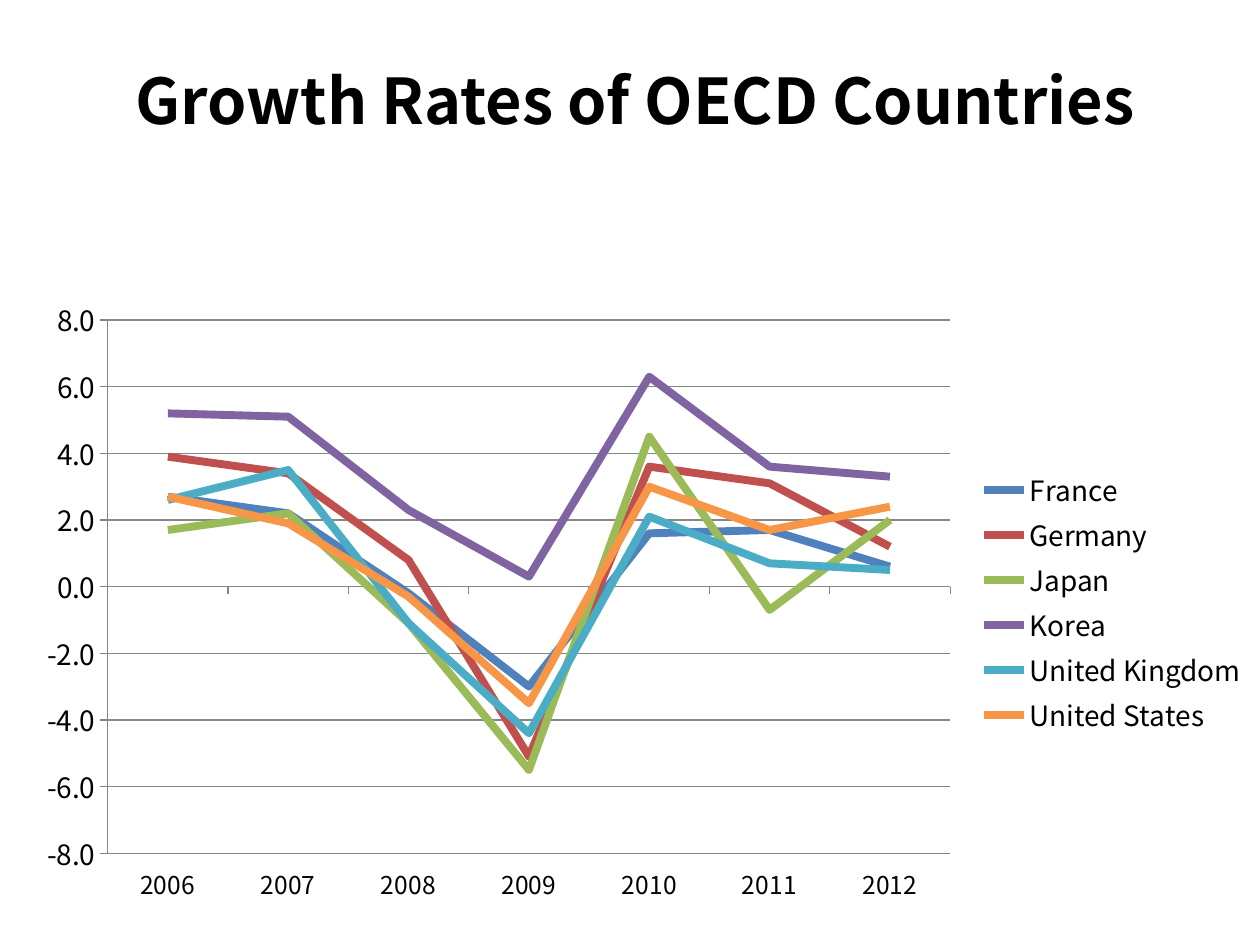
from dataclasses import dataclass

from lxml.etree import SubElement
from pptx import Presentation
from pptx.chart.data import CategoryChartData
from pptx.dml.color import RGBColor as RGB
from pptx.enum.chart import (XL_CHART_TYPE as Chart, XL_LEGEND_POSITION as Legend,
                             XL_MARKER_STYLE as Marker, XL_TICK_LABEL_POSITION as Label,
                             XL_TICK_MARK as Tick)
from pptx.enum.text import MSO_ANCHOR as Anchor, PP_ALIGN as Align
from pptx.oxml.ns import qn
from pptx.util import Pt


@dataclass(frozen=True)
class Theme:
    font: str = "Noto Sans CJK KR"
    text: str = "000000"
    grid: str = "868686"
    title_size: float = 36
    base_size: float = 10
    year_size: float = 14
    label_size: float = 16
    series_width: float = 4.5
    grid_width: float = 0.75


THEME = Theme()
YEARS = [str(year) for year in range(2006, 2013)]
GROWTH = [
    ("France", "4F81BD", (2.7, 2.2, -0.2, -3.0, 1.6, 1.7, 0.6)),
    ("Germany", "C0504D", (3.9, 3.4, 0.8, -5.1, 3.6, 3.1, 1.2)),
    ("Japan", "9BBB59", (1.7, 2.2, -1.1, -5.5, 4.5, -0.7, 2.0)),
    ("Korea", "8064A2", (5.2, 5.1, 2.3, 0.3, 6.3, 3.6, 3.3)),
    ("United Kingdom", "4BACC6", (2.6, 3.5, -1.1, -4.4, 2.1, 0.7, 0.5)),
    ("United States", "F79646", (2.7, 1.9, -0.3, -3.5, 3.0, 1.7, 2.4)),
]


def style_font(font, size, bold=False):
    font.name, font.size, font.bold = THEME.font, Pt(size), bold
    font.color.rgb = RGB.from_string(THEME.text)


def style_line(line, color, width):
    line.color.rgb = RGB.from_string(color)
    line.width = Pt(width)


def add_title(slide, box, text):
    sp = slide.shapes.title
    sp.left, sp.top, sp.width, sp.height = map(Pt, box)
    tf = sp.text_frame
    tf.text = text
    tf.word_wrap = True
    tf.vertical_anchor = Anchor.MIDDLE
    p = tf.paragraphs[0]
    p.alignment = Align.CENTER
    style_font(p.runs[0].font, THEME.title_size, bold=True)


def place_plot(chart, **fractions):
    """Fix the inner plot area as fractions of the chart's box."""
    plot_area = chart.plots[0]._element.getparent()
    layout = plot_area.find(qn("c:layout"))
    if layout is None:
        layout = SubElement(plot_area, qn("c:layout"))
        plot_area.insert(0, layout)
    manual = SubElement(layout, qn("c:manualLayout"))
    settings = {"layoutTarget": "inner", "xMode": "edge", "yMode": "edge", **fractions}
    for name, value in settings.items():
        SubElement(manual, qn(f"c:{name}")).set("val", str(value))


def add_growth_chart(slide, box):
    data = CategoryChartData()
    data.categories = YEARS
    for name, _, values in GROWTH:
        data.add_series(name, values)
    chart = slide.shapes.add_chart(Chart.LINE, *map(Pt, box), data).chart
    chart.has_title = False
    style_font(chart.font, THEME.base_size)
    place_plot(chart, x=0.07, y=0.05, w=0.68, h=0.85)

    # Axes and gridlines
    years, rates = chart.category_axis, chart.value_axis
    for axis, size in ((years, THEME.year_size), (rates, THEME.label_size)):
        axis.major_tick_mark, axis.minor_tick_mark = Tick.OUTSIDE, Tick.NONE
        style_font(axis.tick_labels.font, size)
        style_line(axis.format.line, THEME.grid, THEME.grid_width)
    years.tick_label_position = Label.LOW
    rates.minimum_scale, rates.maximum_scale, rates.major_unit = -8, 8, 2
    rates.tick_labels.number_format = r"##0.0;\-##0.0;0.0;"
    rates.tick_labels.number_format_is_linked = False
    rates.has_major_gridlines = True
    style_line(rates.major_gridlines.format.line, THEME.grid, THEME.grid_width)

    # One line per country
    for series, (_, color, _) in zip(chart.plots[0].series, GROWTH):
        series.smooth = False
        series.marker.style = Marker.NONE
        style_line(series.format.line, color, THEME.series_width)

    # Legend
    chart.has_legend = True
    chart.legend.position = Legend.RIGHT
    chart.legend.include_in_layout = False
    style_font(chart.legend.font, THEME.label_size)


def main():
    prs = Presentation()
    prs.slide_width, prs.slide_height = Pt(720), Pt(540)
    slide = prs.slides.add_slide(prs.slide_layouts[5])
    add_title(slide, (54, 18, 618, 78), "Growth Rates of OECD Countries")
    add_growth_chart(slide, (12, 165, 708, 358.5))
    prs.save("out.pptx")


if __name__ == "__main__":
    main()
